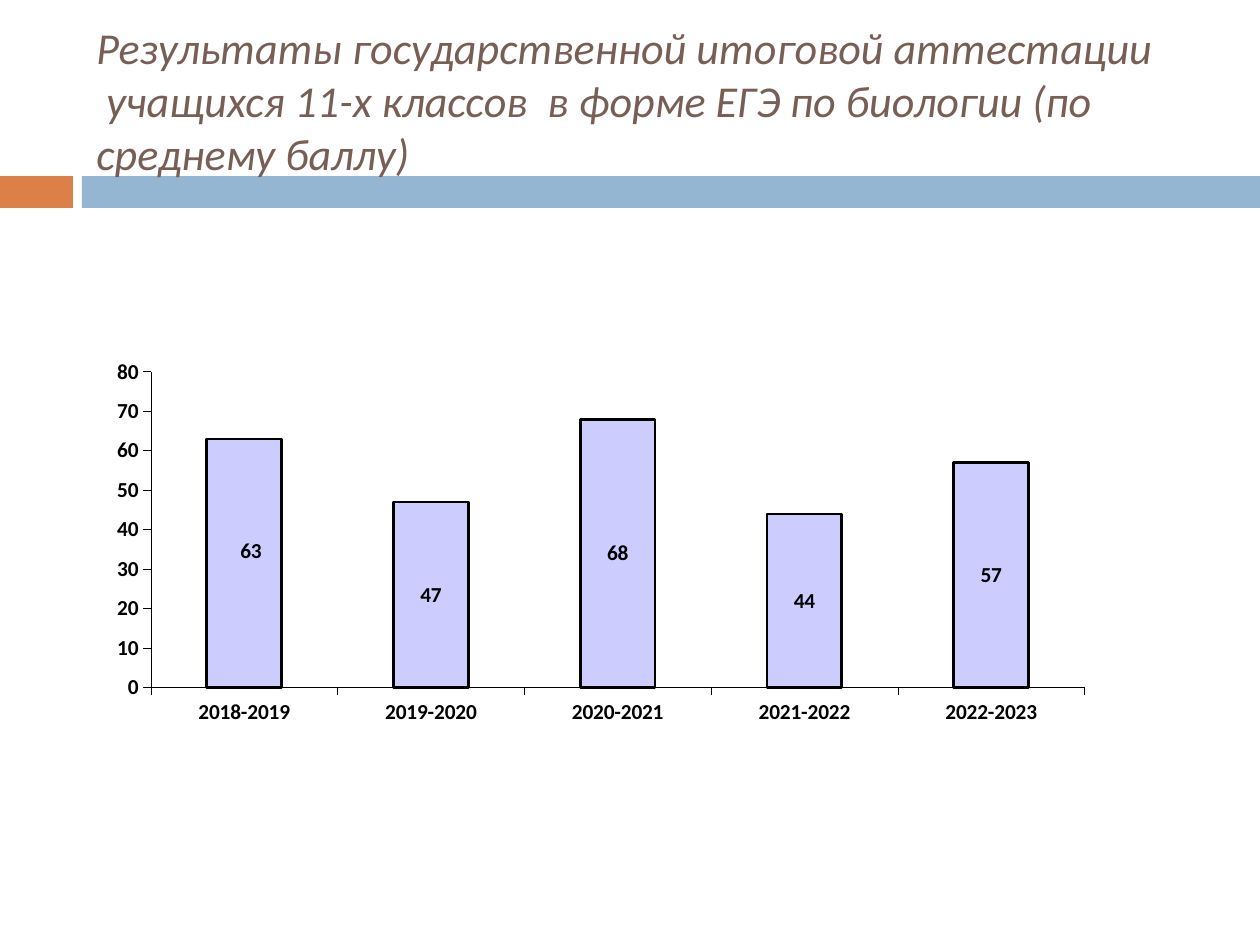
from dataclasses import dataclass

from lxml import etree
from pptx import Presentation
from pptx.chart.data import CategoryChartData
from pptx.dml.color import RGBColor
from pptx.enum.chart import XL_CHART_TYPE, XL_LABEL_POSITION, XL_TICK_LABEL_POSITION, XL_TICK_MARK
from pptx.enum.shapes import MSO_SHAPE
from pptx.enum.text import MSO_ANCHOR
from pptx.oxml.ns import qn
from pptx.util import Emu, Pt

RECTANGLE = MSO_SHAPE.RECTANGLE
MIDDLE = MSO_ANCHOR.MIDDLE
STACKED = XL_CHART_TYPE.COLUMN_STACKED
LABEL_CENTER = XL_LABEL_POSITION.CENTER
LABELS_LOW = XL_TICK_LABEL_POSITION.LOW
TICK_OUT = XL_TICK_MARK.OUTSIDE
TICK_NONE = XL_TICK_MARK.NONE

PX_PER_INCH = 126
SLIDE_WIDTH, SLIDE_HEIGHT = 1260, 945


@dataclass(frozen=True)
class Theme:
    font: str = "Calibri"
    title_size: float = 25.2
    chart_size: float = 12.2
    axis_width: float = 0.38
    column_line_width: float = 1.53
    title: RGBColor = RGBColor.from_string("775F55")
    accent: RGBColor = RGBColor.from_string("DD8047")
    band: RGBColor = RGBColor.from_string("94B6D2")
    column: RGBColor = RGBColor.from_string("CCCCFF")
    ink: RGBColor = RGBColor.from_string("000000")


@dataclass(frozen=True)
class Box:
    left: int
    top: int
    width: int
    height: int

    def emu(self) -> tuple:
        return tuple(px(n) for n in (self.left, self.top, self.width, self.height))


@dataclass(frozen=True)
class Bar:
    box: Box
    color: RGBColor


THEME = Theme()
BARS = (
    Bar(Box(0, 176, 73, 32), THEME.accent),
    Bar(Box(82, 176, 1178, 32), THEME.band),
)
TITLE_BOX = Box(84, 32, 1124, 136)
TITLE = (
    "Результаты государственной итоговой аттестации\v"
    " учащихся 11-х классов  в форме ЕГЭ по биологии (по среднему баллу)"
)
CHART_BOX = Box(115, 352, 970, 389)
PLOT_LAYOUT = {"layoutTarget": "inner", "xMode": "edge", "yMode": "edge",
               "x": 0.037, "y": 0.051, "w": 0.963, "h": 0.812}
FIRST_LABEL_LAYOUT = {"x": 0.007, "y": -0.03}
SCORES = {"2018-2019": 63, "2019-2020": 47, "2020-2021": 68, "2021-2022": 44, "2022-2023": 57}


def px(length: int) -> Emu:
    return Emu(round(length * 914400 / PX_PER_INCH))


def add_bar(slide, bar: Bar) -> None:
    shape = slide.shapes.add_shape(RECTANGLE, *bar.box.emu())
    shape.shadow.inherit = False
    shape.fill.solid()
    shape.fill.fore_color.rgb = bar.color
    shape.line.fill.background()


def add_title(slide) -> None:
    text_frame = slide.shapes.add_textbox(*TITLE_BOX.emu()).text_frame
    text_frame.word_wrap = True
    text_frame.vertical_anchor = MIDDLE
    text_frame.text = TITLE
    for run in text_frame.paragraphs[0].runs:
        run.font.name = THEME.font
        run.font.size = Pt(THEME.title_size)
        run.font.italic = True
        run.font.color.rgb = THEME.title


def style_chart_font(font) -> None:
    font.name = THEME.font
    font.size = Pt(THEME.chart_size)
    font.bold = True
    font.color.rgb = THEME.ink


def style_axis(axis) -> None:
    axis.has_major_gridlines = False
    axis.major_tick_mark = TICK_OUT
    axis.minor_tick_mark = TICK_NONE
    axis.format.line.color.rgb = THEME.ink
    axis.format.line.width = Pt(THEME.axis_width)
    style_chart_font(axis.tick_labels.font)


def set_layout(parent, index: int, values: dict) -> None:
    for existing in parent.findall(qn("c:layout")):
        parent.remove(existing)
    layout = etree.Element(qn("c:layout"))
    manual = etree.SubElement(layout, qn("c:manualLayout"))
    for name, value in values.items():
        etree.SubElement(manual, qn(f"c:{name}")).set("val", str(value))
    parent.insert(index, layout)


def add_score_chart(slide) -> None:
    data = CategoryChartData()
    data.categories = list(SCORES)
    data.add_series("Series 1", list(SCORES.values()))
    chart = slide.shapes.add_chart(STACKED, *CHART_BOX.emu(), data).chart
    chart.has_legend = False
    chart.has_title = False
    style_chart_font(chart.font)
    style_axis(chart.category_axis)
    style_axis(chart.value_axis)
    chart.category_axis.tick_label_position = LABELS_LOW
    chart.value_axis.minimum_scale = 0
    chart.value_axis.maximum_scale = 80
    chart.value_axis.major_unit = 10

    plot = chart.plots[0]
    plot.vary_by_categories = False
    plot.gap_width = 150
    plot.overlap = 100
    series = plot.series[0]
    series.format.fill.solid()
    series.format.fill.fore_color.rgb = THEME.column
    series.format.line.color.rgb = THEME.ink
    series.format.line.width = Pt(THEME.column_line_width)

    labels = series.data_labels
    labels.show_value = True
    labels.position = LABEL_CENTER
    style_chart_font(labels.font)
    first_label = series.points[0].data_label
    first_label.position = LABEL_CENTER
    style_chart_font(first_label.font)
    set_layout(series._element.find(f".//{qn('c:dLbl')}"), 1, FIRST_LABEL_LAYOUT)
    set_layout(chart._chartSpace.find(f".//{qn('c:plotArea')}"), 0, PLOT_LAYOUT)


def main() -> None:
    presentation = Presentation()
    presentation.slide_width = px(SLIDE_WIDTH)
    presentation.slide_height = px(SLIDE_HEIGHT)
    slide = presentation.slides.add_slide(presentation.slide_layouts[6])
    for bar in BARS:
        add_bar(slide, bar)
    add_title(slide)
    add_score_chart(slide)
    presentation.save("out.pptx")


if __name__ == "__main__":
    main()
